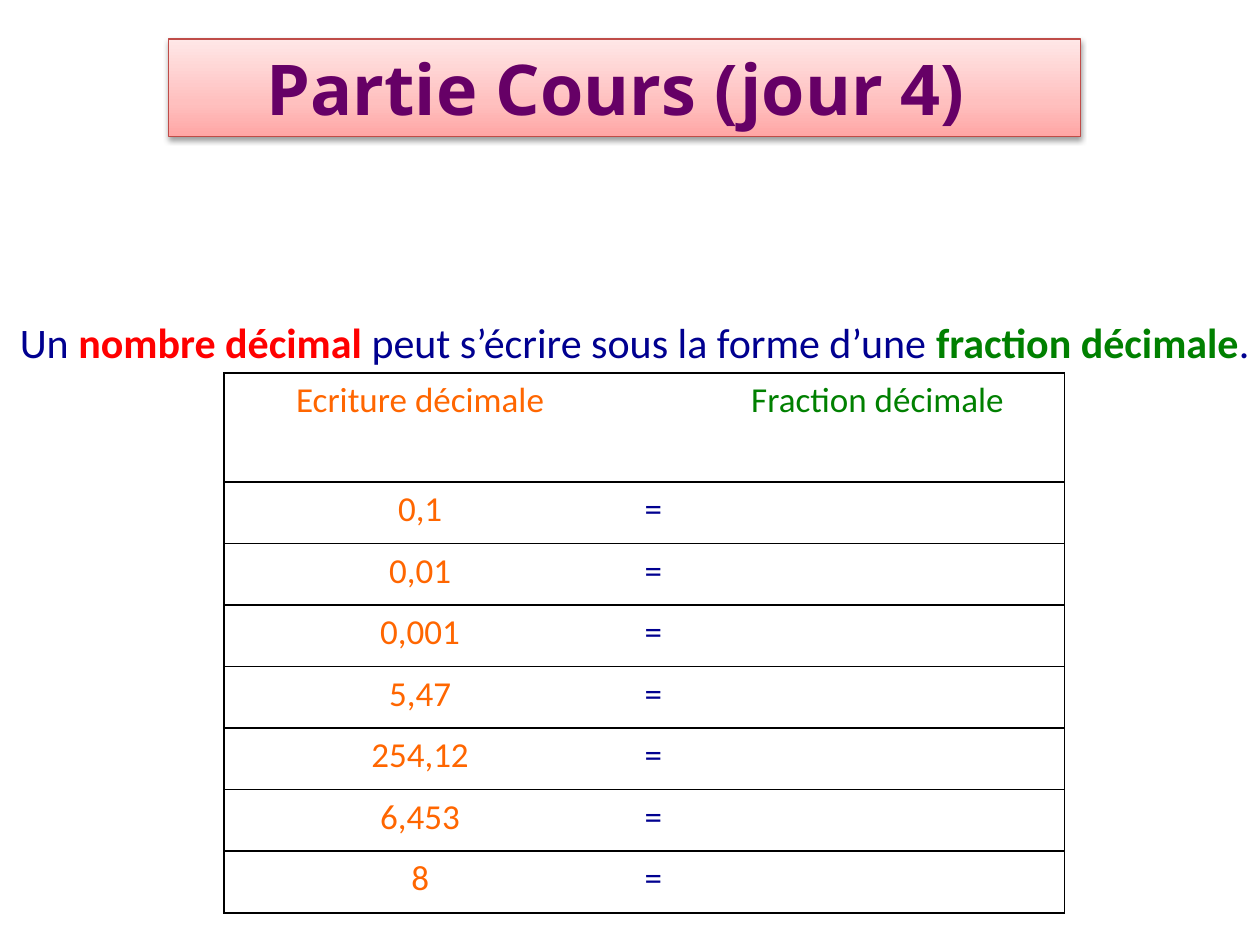
from copy import deepcopy

from lxml import etree
from pptx import Presentation, util as u
from pptx.dml.color import RGBColor
from pptx.enum import shapes, text
from pptx.oxml.ns import qn

ORANGE, GREEN, BLUE, RED = "FF6600", "008000", "000090", "FF0000"


def rgb(value):
    return RGBColor.from_string(value)


def add_run(p, words, size, color, bold=False, font="Calibri"):
    r = p.add_run()
    r.text = words
    r.font.size, r.font.bold, r.font.name = u.Pt(size), bold, font
    r.font.color.rgb = rgb(color)


prs = Presentation()
prs.slide_width, prs.slide_height = u.Cm(25.4), u.Cm(19.05)
s = prs.slides.add_slide(prs.slide_layouts[6])

# Title banner: gradient fill, thin line, soft shadow below
sp = s.shapes.add_shape(shapes.MSO_SHAPE.RECTANGLE,
                        u.Cm(3.4), u.Cm(0.79), u.Cm(18.39), u.Cm(1.96))
sp.fill.gradient()
sp.fill.gradient_angle = 90
stops = sp._element.spPr.find(".//" + qn("a:gsLst"))
stops.append(deepcopy(stops[-1]))
for stop, (pos, color) in zip(sp.fill.gradient_stops,
                              [(0, "FFA6A5"), (0.35, "FFC0BF"), (1, "FFE7E7")]):
    stop.position = pos
    stop.color.rgb = rgb(color)
sp.line.color.rgb = rgb("BF4C48")
sp.line.width = u.Pt(0.75)
sp.shadow.inherit = False
effects = sp._element.spPr.find(qn("a:effectLst"))
shadow = etree.SubElement(effects, qn("a:outerShdw"), blurRad="40000",
                          dist="20000", dir="5400000", rotWithShape="0")
black = etree.SubElement(shadow, qn("a:srgbClr"), val="000000")
etree.SubElement(black, qn("a:alpha"), val="38000")
tf = sp.text_frame
tf.word_wrap = True
tf.vertical_anchor = text.MSO_ANCHOR.MIDDLE
p = tf.paragraphs[0]
p.alignment = text.PP_ALIGN.CENTER
add_run(p, "Partie Cours (jour 4) ", 40, "660066", True, "Noto Sans")

# Table: outer frame and row rules, no inner vertical lines
rows = [("Ecriture décimale", "", "Fraction décimale")]
rows += [(n, "=", "") for n in
         ("0,1", "0,01", "0,001", "5,47", "254,12", "6,453", "8")]
frame = s.shapes.add_table(len(rows), 3, u.Cm(4.52), u.Cm(7.52),
                           u.Cm(16.94), u.Cm(10.9))
table = frame.table
table.first_row = table.horz_banding = False
for col, width in zip(table.columns, (7.9, 1.5, 7.54)):
    col.width = u.Cm(width)
for i, row in enumerate(rows):
    table.rows[i].height = u.Cm(1.24 if i else 2.2)
    for j, (words, color) in enumerate(zip(row, (ORANGE, BLUE, GREEN))):
        cell = table.cell(i, j)
        p = cell.text_frame.paragraphs[0]
        p.alignment = text.PP_ALIGN.CENTER
        if words:
            add_run(p, words, 20, color)
        tcPr = cell._tc.get_or_add_tcPr()
        for side, shown in (("L", j == 0), ("R", j == 2), ("T", True), ("B", True)):
            ln = etree.SubElement(tcPr, qn("a:ln" + side), w="12700")
            if shown:
                fill = etree.SubElement(ln, qn("a:solidFill"))
                etree.SubElement(fill, qn("a:srgbClr"), val="000000")
            else:
                etree.SubElement(ln, qn("a:noFill"))
        cell.fill.background()

# Rule sentence above the table
tb = s.shapes.add_textbox(u.Cm(0.15), u.Cm(6.25), u.Cm(25.68), u.Cm(1.27))
tb.text_frame.word_wrap = False
p = tb.text_frame.paragraphs[0]
for words, color, bold in (
        ("Un ", BLUE, False),
        ("nombre décimal ", RED, True),
        ("peut s’écrire sous la forme d’une ", BLUE, False),
        ("fraction décimale", GREEN, True),
        (".", BLUE, False)):
    add_run(p, words, 24, color, bold)

prs.save("out.pptx")
